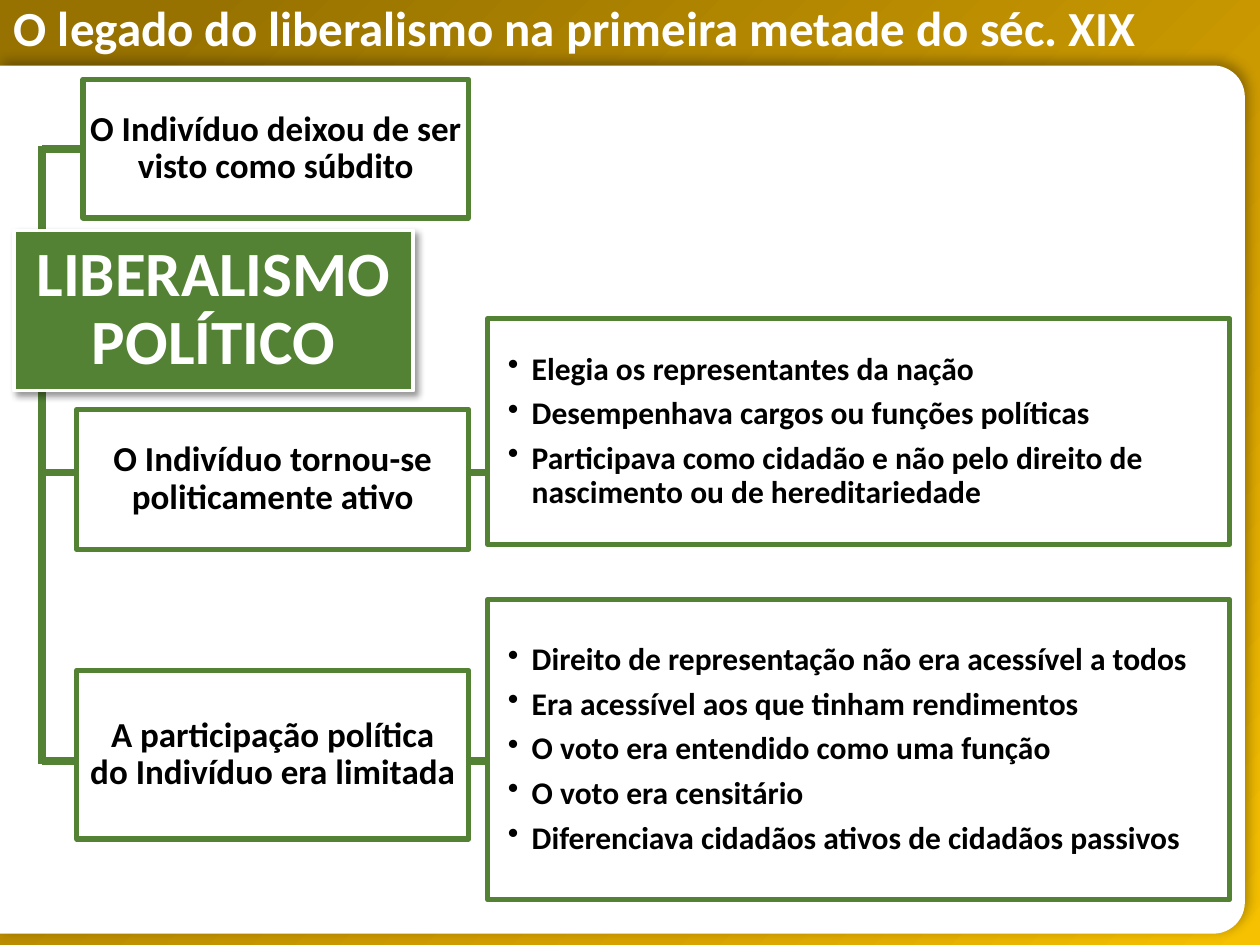
import math

from lxml import etree
from pptx import Presentation
from pptx import util as u
from pptx.dml.color import RGBColor
from pptx.enum import shapes, text
from pptx.oxml import parse_xml
from pptx.oxml.ns import nsdecls, qn

GREEN = RGBColor(0x54, 0x82, 0x35)
WHITE = RGBColor(0xFF, 0xFF, 0xFF)
BLACK = RGBColor(0, 0, 0)
GOLD_STOPS = [(9, "977200"), (72, "D7A200"), (100, "F6C100")]
FONT = "Calibri"

TITLE = "O legado do liberalismo na primeira metade do séc. XIX"
TOPIC = "LIBERALISMO POLÍTICO"

# Each branch: text, (left, top, height), connector y, details, (top, height)
BRANCHES = [
    ("O Indivíduo deixou de ser visto como súbdito", (0.66, 0.63, 1.1), 1.18, [], None),
    ("O Indivíduo tornou-se politicamente ativo", (0.61, 3.25, 1.11), 3.75,
     ["Elegia os representantes da nação",
      "Desempenhava cargos ou funções políticas",
      "Participava como cidadão e não pelo direito de nascimento ou de hereditariedade"],
     (2.53, 1.79)),
    ("A participação política\vdo Indivíduo era limitada", (0.61, 5.32, 1.34), 6.04,
     ["Direito de representação não era acessível a todos",
      "Era acessível aos que tinham rendimentos",
      "O voto era entendido como uma função",
      "O voto era censitário",
      "Diferenciava cidadãos ativos de cidadãos passivos"],
     (4.76, 2.38)),
]
TRUNK_X, BRANCH_RIGHT = 0.33, 3.72
DETAIL_X, DETAIL_W = 3.87, 5.89
PANEL_TOP, PANEL_RIGHT, PANEL_BOTTOM, RADIUS = 0.52, 9.88, 7.41, 0.25

prs = Presentation()
prs.slide_width, prs.slide_height = u.Inches(10), u.Inches(7.5)
s = prs.slides.add_slide(prs.slide_layouts[5])


def add_shadow(sp, alpha, blur, dist, angle):
    sp._element.spPr.append(parse_xml(
        f'<a:effectLst {nsdecls("a")}><a:outerShdw blurRad="{u.Pt(blur)}" dist="{u.Pt(dist)}" '
        f'dir="{angle * 60000}" algn="ctr" rotWithShape="0"><a:srgbClr val="000000">'
        f'<a:alpha val="{alpha * 1000}"/></a:srgbClr></a:outerShdw></a:effectLst>'))


def add_box(x, y, w, h, fill, line, width):
    sp = s.shapes.add_shape(shapes.MSO_SHAPE.RECTANGLE, *map(u.Inches, (x, y, w, h)))
    sp.shadow.inherit = False
    sp.fill.solid()
    sp.fill.fore_color.rgb = fill
    sp.line.color.rgb = line
    sp.line.width = u.Pt(width)
    return sp


def add_run(p, words, size, color):
    r = p.add_run()
    r.text = words
    r.font.name, r.font.size, r.font.bold = FONT, u.Pt(size), True
    r.font.color.rgb = color


def write(sp, lines, size, color, insets=(0.01, 0.01), left=None, bullets=False):
    tf = sp.text_frame
    tf.word_wrap = True
    tf.vertical_anchor = text.MSO_ANCHOR.MIDDLE
    tf.margin_left = u.Inches(insets[0] if left is None else left)
    tf.margin_right = u.Inches(insets[0])
    tf.margin_top = tf.margin_bottom = u.Inches(insets[1])
    for i, line in enumerate(lines):
        p = tf.add_paragraph() if i else tf.paragraphs[0]
        p.alignment = text.PP_ALIGN.LEFT if bullets else text.PP_ALIGN.CENTER
        p.line_spacing = 0.9
        p.space_after = u.Pt(round(size * 0.35))
        if bullets:
            pPr = p._p.get_or_add_pPr()
            pPr.set("marL", str(u.Inches(0.19)))
            pPr.set("indent", str(-u.Inches(0.19)))
            etree.SubElement(pPr, qn("a:buChar")).set("char", "•")
        for j, part in enumerate(line.split("\v")):
            if j:
                p.add_line_break()
            add_run(p, part, size, color)


def add_line(x1, y1, x2, y2):
    c = s.shapes.add_connector(shapes.MSO_CONNECTOR.STRAIGHT, *map(u.Inches, (x1, y1, x2, y2)))
    c.line.color.rgb = GREEN
    c.line.width = u.Pt(4.5)
    etree.SubElement(c._element.spPr, qn("a:effectLst"))


def corner(cx, cy, start):
    """Points of a clockwise quarter circle, from the start angle in degrees."""
    angles = [math.radians(start + 90 * i / 12) for i in range(13)]
    return [(cx + RADIUS * math.cos(a), cy + RADIUS * math.sin(a)) for a in angles]


# Gold backdrop
backdrop = add_box(0, 0, 10, 7.5, WHITE, WHITE, 0)
backdrop.line.fill.background()
stops = "".join(f'<a:gs pos="{pos * 1000}"><a:srgbClr val="{c}"/></a:gs>' for pos, c in GOLD_STOPS)
spPr = backdrop._element.spPr
spPr.replace(spPr.find(qn("a:solidFill")), parse_xml(
    f'<a:gradFill {nsdecls("a")} rotWithShape="1"><a:gsLst>{stops}</a:gsLst>'
    f'<a:lin ang="{45 * 60000}" scaled="0"/></a:gradFill>'))

# Title, brought in front of the backdrop
title = s.shapes.title
title.left, title.top, title.width, title.height = map(u.Inches, (0.01, 0.15, 9.6, 0.37))
s.shapes._spTree.append(title._element)
tf = title.text_frame
tf.word_wrap = True
tf.auto_size = text.MSO_AUTO_SIZE.NONE
tf.vertical_anchor = text.MSO_ANCHOR.MIDDLE
p = tf.paragraphs[0]
p.alignment = text.PP_ALIGN.LEFT
p.line_spacing = u.Pt(16)
add_run(p, TITLE, 28, WHITE)

# White panel with rounded right corners
arc_x = PANEL_RIGHT - RADIUS
outline = (corner(arc_x, PANEL_TOP + RADIUS, -90) + corner(arc_x, PANEL_BOTTOM - RADIUS, 0)
           + [(0, PANEL_BOTTOM)])
fb = s.shapes.build_freeform(0, u.Inches(PANEL_TOP), scale=1.0)
fb.add_line_segments([(u.Inches(x), u.Inches(y)) for x, y in outline], close=True)
panel = fb.convert_to_shape()
panel.fill.solid()
panel.fill.fore_color.rgb = WHITE
panel.line.fill.background()
add_shadow(panel, 30, 7, 3, 315)

# Connectors, behind the boxes
for _, _, y, details, _ in BRANCHES:
    add_line(DETAIL_X if details else BRANCH_RIGHT, y, TRUNK_X, y)
add_line(TRUNK_X, BRANCHES[0][2] - 0.02, TRUNK_X, BRANCHES[-1][2] + 0.02)

# Branches and their details
for words, (x, y, h), _, details, place in BRANCHES:
    write(add_box(x, y, BRANCH_RIGHT - x, h, WHITE, GREEN, 3), [words], 20, BLACK)
    if details:
        top, height = place
        box = add_box(DETAIL_X, top, DETAIL_W, height, WHITE, GREEN, 3)
        write(box, details, 18, BLACK, left=0.16, bullets=True)

# Central topic
topic = add_box(0.11, 1.83, 3.17, 1.27, GREEN, WHITE, 2.25)
topic._element.spPr.remove(topic._element.spPr.find(qn("a:effectLst")))
add_shadow(topic, 40, 4, 3, 45)
write(topic, [TOPIC], 36, WHITE, insets=(0.08, 0.07))

prs.save("out.pptx")
